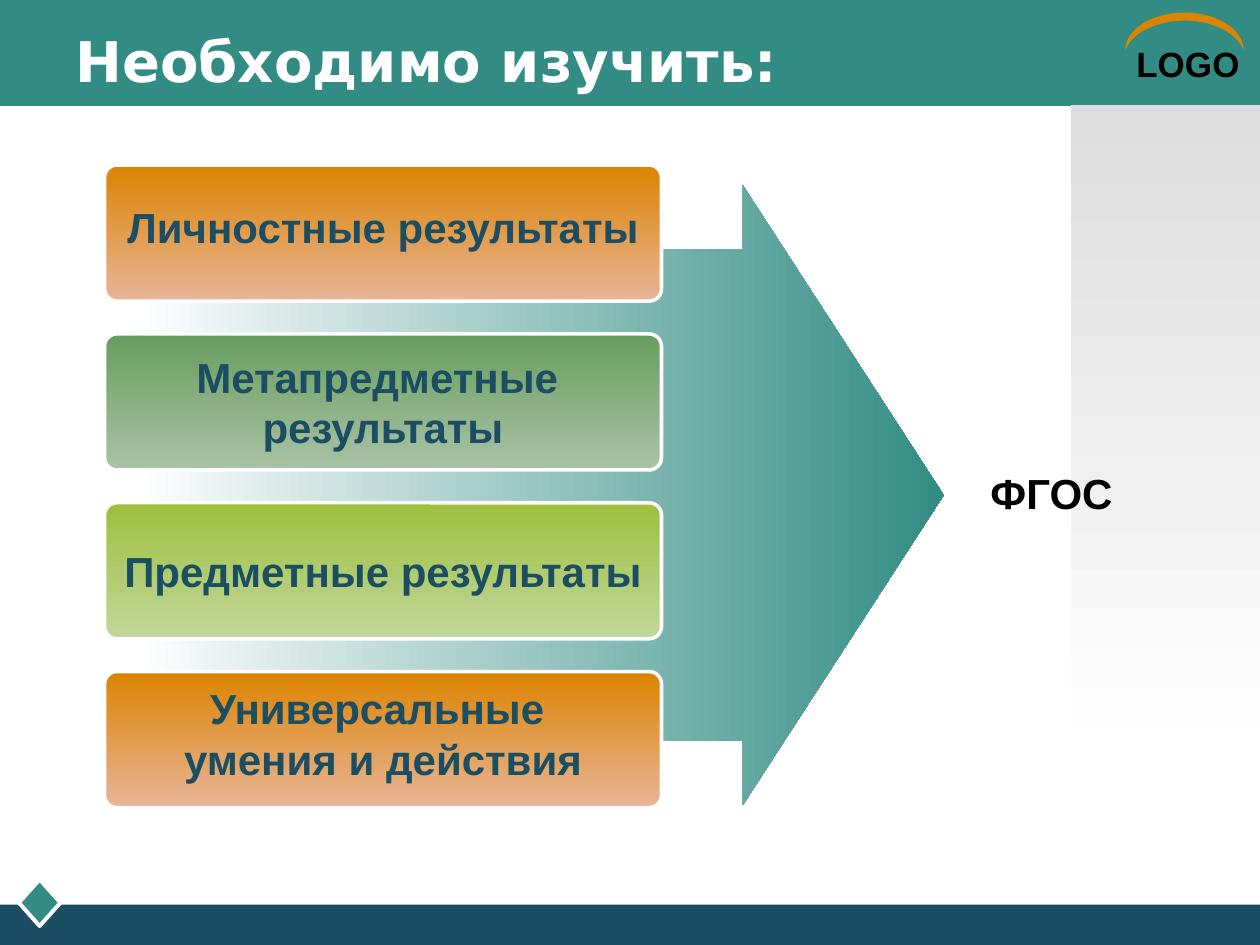
from pptx import Presentation
from pptx.dml.color import RGBColor
from pptx.enum.shapes import MSO_SHAPE
from pptx.enum.text import MSO_ANCHOR, MSO_AUTO_SIZE, PP_ALIGN
from pptx.util import Inches, Pt

TEAL = RGBColor(0x32, 0x8C, 0x83)
NAVY = RGBColor(0x1B, 0x4E, 0x63)
WHITE = RGBColor(0xFF, 0xFF, 0xFF)
BLACK = RGBColor(0x00, 0x00, 0x00)
GREY = RGBColor(0xDD, 0xDD, 0xDD)
ORANGE = RGBColor(0xDC, 0x83, 0x00)
LIGHT_ORANGE = RGBColor(0xE7, 0xB5, 0x98)
GREEN = RGBColor(0x69, 0x9D, 0x5F)
LIGHT_GREEN = RGBColor(0xAA, 0xC2, 0xA6)
LIME = RGBColor(0x9D, 0xC0, 0x3C)
LIGHT_LIME = RGBColor(0xC2, 0xD6, 0x9D)

DOWN, RIGHT = 270, 0  # gradient angles, counter-clockwise


def write_text(frame, text, size=24, color=NAVY, font="Arial",
               align=PP_ALIGN.CENTER, wrap=False):
    """Fill a text frame with bold text, one paragraph per line."""
    frame.text = text
    frame.word_wrap = wrap
    frame.auto_size = MSO_AUTO_SIZE.NONE
    frame.vertical_anchor = MSO_ANCHOR.MIDDLE
    for paragraph in frame.paragraphs:
        paragraph.alignment = align
        paragraph.font.name = font
        paragraph.font.size = Pt(size)
        paragraph.font.bold = True
        paragraph.font.color.rgb = color


class SlideBuilder:
    def __init__(self, slide):
        self.slide = slide

    def shape(self, kind, left, top, width, height, fill=None, gradient=None,
              angle=DOWN, line=None, line_width=2, adjustments=()):
        shape = self.slide.shapes.add_shape(
            kind, Inches(left), Inches(top), Inches(width), Inches(height))
        shape.shadow.inherit = False
        for index, value in enumerate(adjustments):
            shape.adjustments[index] = value
        if gradient:
            shape.fill.gradient()
            shape.fill.gradient_angle = angle
            for stop, color in zip(shape.fill.gradient_stops, gradient):
                stop.color.rgb = color
        elif fill is not None:
            shape.fill.solid()
            shape.fill.fore_color.rgb = fill
        else:
            shape.fill.background()
        if line is not None:
            shape.line.color.rgb = line
            shape.line.width = Pt(line_width)
        else:
            shape.line.fill.background()
        return shape

    def card(self, left, top, width, height, text, color=NAVY, wrap=False,
             bottom_inset=0.05, **style):
        card = self.shape(MSO_SHAPE.ROUNDED_RECTANGLE, left, top, width, height,
                          adjustments=[0.091], **style)
        write_text(card.text_frame, text, color=color, wrap=wrap)
        card.text_frame.margin_bottom = Inches(bottom_inset)

    def label(self, left, top, width, height, text, **text_format):
        box = self.slide.shapes.add_textbox(
            Inches(left), Inches(top), Inches(width), Inches(height))
        write_text(box.text_frame, text, **text_format)

    def title(self, left, top, width, height, text):
        title = self.slide.shapes.title
        title.left, title.top = Inches(left), Inches(top)
        title.width, title.height = Inches(width), Inches(height)
        write_text(title.text_frame, text, size=32, color=WHITE,
                   font="DejaVu Sans", align=PP_ALIGN.LEFT, wrap=True)
        # Bring the title in front of the header bar
        title.element.getparent().append(title.element)


def main():
    presentation = Presentation()
    presentation.slide_width, presentation.slide_height = Inches(10), Inches(7.5)
    builder = SlideBuilder(
        presentation.slides.add_slide(presentation.slide_layouts[5]))

    builder.shape(MSO_SHAPE.RECTANGLE, 0, 0, 10, 0.84, fill=TEAL)
    builder.shape(MSO_SHAPE.RECTANGLE, 0, 7.18, 10, 0.32, fill=NAVY)
    builder.shape(MSO_SHAPE.DIAMOND, 0.15, 6.98, 0.33, 0.37, fill=TEAL,
                  line=WHITE, line_width=2.25)
    builder.label(8.92, 0.29, 1.08, 0.43, "LOGO", size=20, color=BLACK,
                  align=PP_ALIGN.LEFT)
    arc = builder.shape(MSO_SHAPE.MOON, 9.25, -0.22, 0.3, 0.94, fill=ORANGE,
                        adjustments=[0.212])
    arc.rotation = 90
    builder.shape(MSO_SHAPE.RECTANGLE, 8.5, 0.83, 1.5, 5.25,
                  gradient=(GREY, WHITE))
    builder.title(0.5, 0.17, 9, 0.62, "Необходимо изучить:")

    builder.shape(MSO_SHAPE.RIGHT_ARROW, 1.06, 1.47, 6.43, 4.92,
                  gradient=(WHITE, TEAL), angle=RIGHT,
                  adjustments=[0.793, 0.324])

    results = [
        ("Личностные результаты", (ORANGE, LIGHT_ORANGE), 0.15),
        ("Метапредметные \nрезультаты", (GREEN, LIGHT_GREEN), 0.05),
        ("Предметные результаты", (LIME, LIGHT_LIME), 0.05),
        ("Универсальные \nумения и действия", (ORANGE, LIGHT_ORANGE), 0.15),
    ]
    for row, (text, gradient, bottom_inset) in enumerate(results):
        builder.card(0.83, 1.31 + 1.34 * row, 4.42, 1.08, text,
                     gradient=gradient, line=WHITE, bottom_inset=bottom_inset)
    builder.card(6.97, 3.2, 2.75, 1.42, "ФГОС", color=BLACK, wrap=True)

    presentation.save("out.pptx")


if __name__ == "__main__":
    main()
